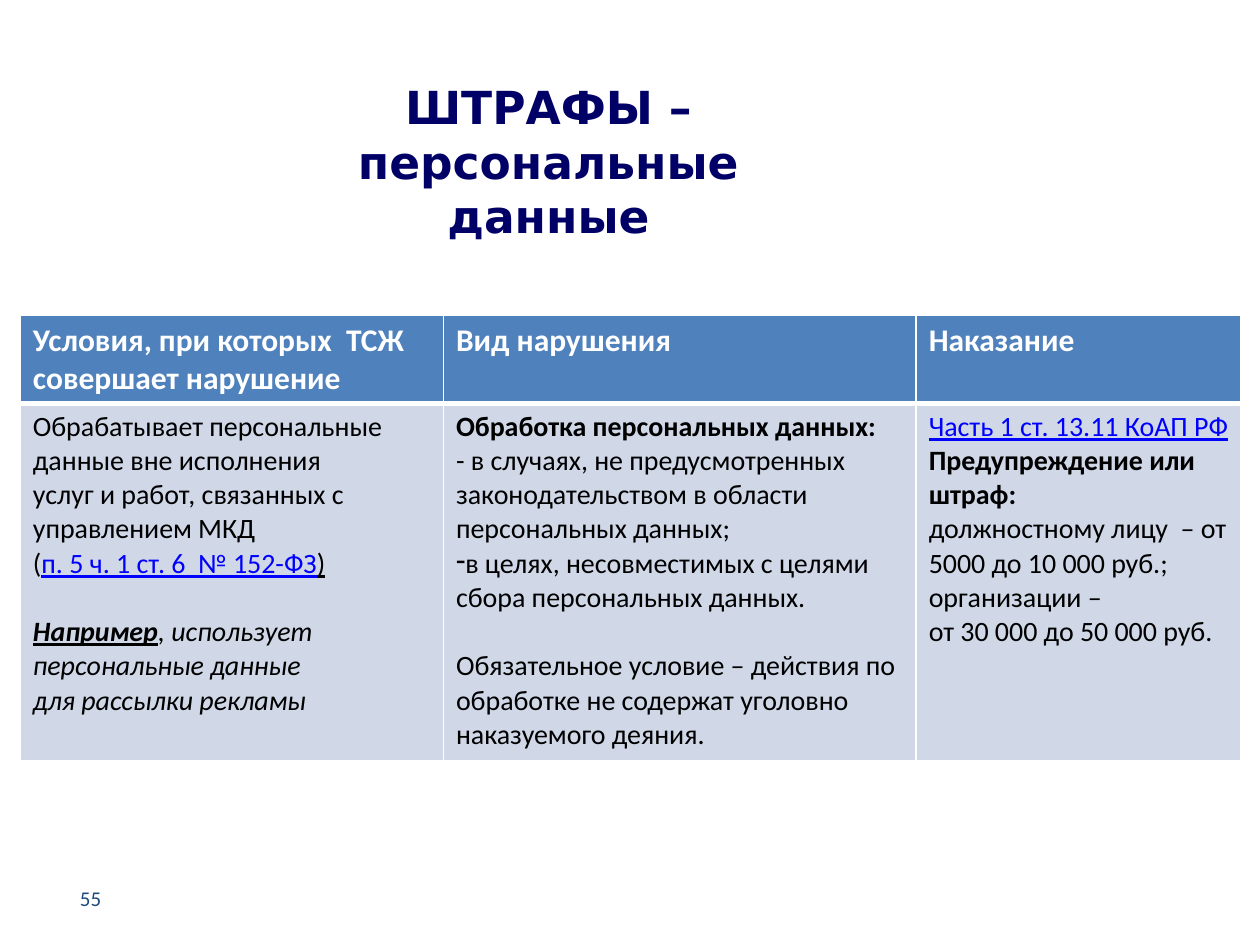
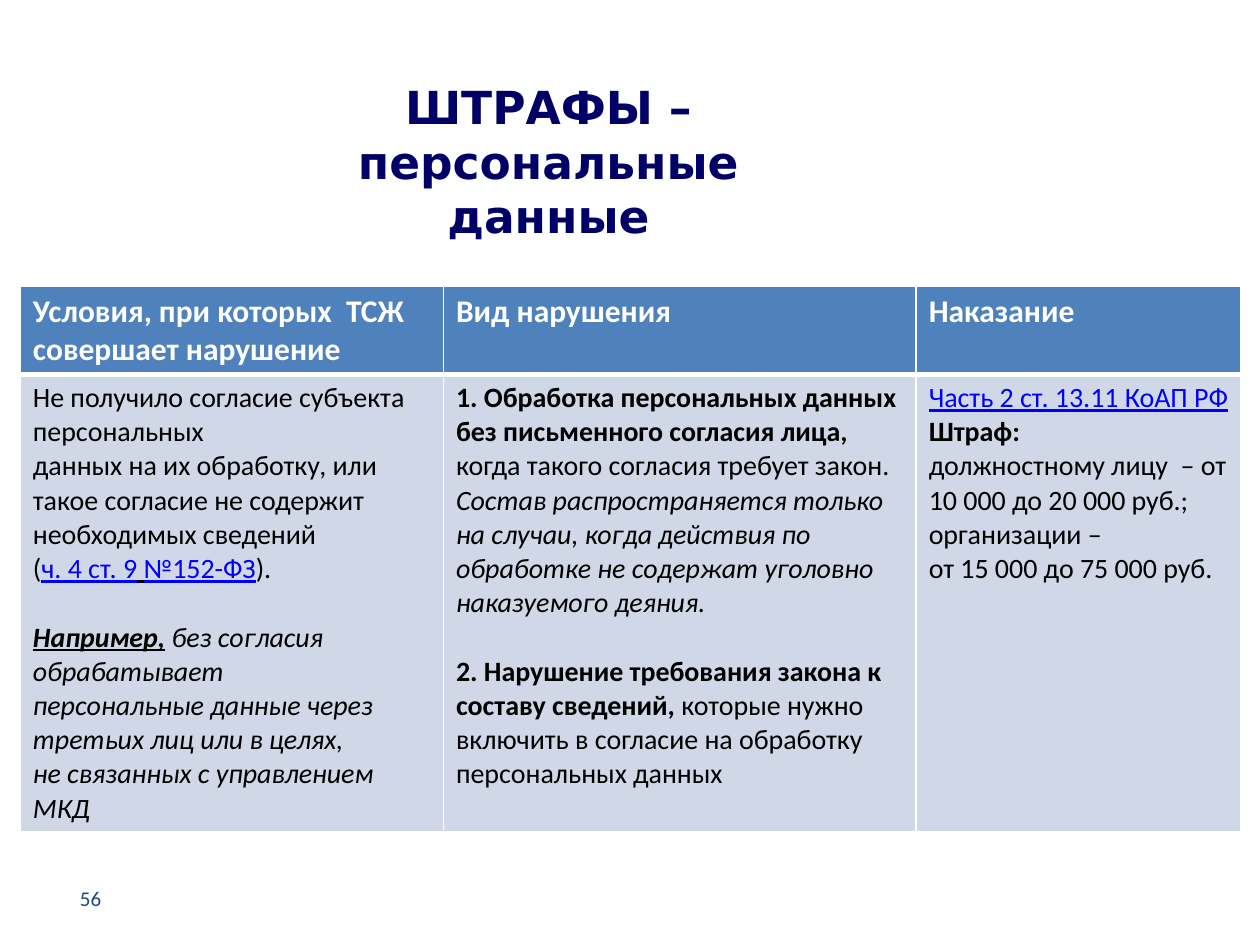
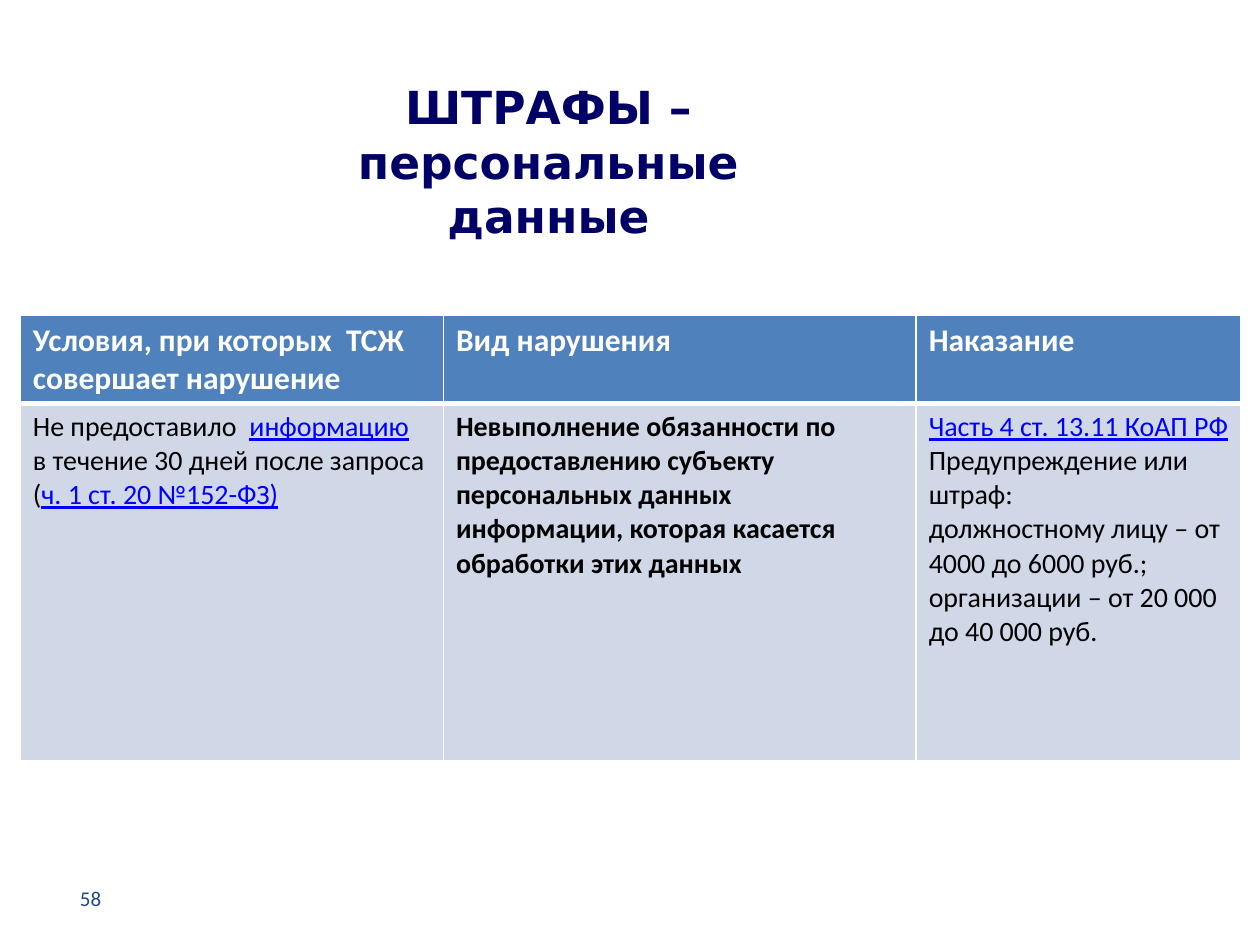
from dataclasses import dataclass

from lxml.etree import SubElement
from pptx import Presentation
from pptx.dml.color import RGBColor
from pptx.enum.text import MSO_ANCHOR, PP_ALIGN
from pptx.oxml.ns import qn
from pptx.util import Cm, Pt

COLORS = {
    "title": "000066",
    "header": "4F81BD",
    "body": "D0D8E8",
    "grid": "FFFFFF",
    "header_text": "FFFFFF",
    "text": "000000",
    "link": "0000FF",
    "page": "1F497D",
}
TITLE_FONT, BODY_FONT = "DejaVu Sans", "Calibri"
BODY_SIZE = 16
BLANK_LINE = Pt(19.5)

# Boxes: left, top, width, height in cm
TITLE_BOX = (5.94, 1.19, 10.24, 4.11)
PAGE_BOX = (0.89, 17.6, 1.4, 1.02)
TABLE_LEFT = 0.41
COLUMN_WIDTHS = (8.53, 9.53, 6.55)
HEADER_HEIGHT = 1.78

TITLE = "ШТРАФЫ –\vперсональные\vданные"
HEADINGS = ("Условия, при которых  ТСЖ совершает нарушение", "Вид нарушения", "Наказание")


@dataclass
class Para:
    """Runs are (text, style); style letters: b bold, i italic, u underline, l link."""
    runs: list
    gap: bool = False
    dash: bool = False


def plain(text, style=""):
    return Para([(text, style)])


# Content of the slides
FINES = [
    {
        "page": "55", "top": 6.35, "body_height": 7.21,
        "cells": [
            [
                Para([("Обрабатывает персональные данные вне исполнения\n"
                       "услуг и работ, связанных с управлением МКД\n(", ""),
                      ("п. 5 ч. 1 ст. 6  № 152-ФЗ", "lu"), (")", "u")]),
                Para([("Например", "biu"),
                      (", использует персональные данные\nдля рассылки рекламы", "i")], gap=True),
            ],
            [
                plain("Обработка персональных данных:", "b"),
                plain("- в случаях, не предусмотренных законодательством в области "
                      "персональных данных;"),
                Para([("в целях, несовместимых с целями сбора персональных данных.", "")],
                     dash=True),
                Para([("Обязательное условие – действия по обработке не содержат "
                       "уголовно наказуемого деяния.", "")], gap=True),
            ],
            [
                plain("Часть 1 ст. 13.11 КоАП РФ", "lu"),
                plain("Предупреждение или штраф:", "b"),
                plain("должностному лицу  – от 5000 до 10 000 руб.;"),
                plain("организации –"),
                plain("от 30 000 до 50 000 руб."),
            ],
        ],
    },
    {
        "page": "56", "top": 5.77, "body_height": 9.22,
        "cells": [
            [
                plain("Не получило согласие субъекта персональных\n"
                      "данных на их обработку, или такое согласие не содержит\n"
                      "необходимых сведений"),
                Para([("(", ""), ("ч. 4 ст. 9", "lu"), (" ", "u"),
                      ("№152-ФЗ", "lu"), (").", "")]),
                Para([("Например,", "biu"),
                      (" без согласия обрабатывает\nперсональные данные через третьих лиц "
                       "или в целях,\nне связанных с управлением МКД", "i")], gap=True),
            ],
            [
                Para([("1. Обработка персональных данных без письменного согласия лица, ", "b"),
                      ("когда такого согласия требует закон. ", ""),
                      ("Состав распространяется только на случаи, когда действия по обработке "
                       "не содержат уголовно наказуемого деяния.", "i")]),
                Para([("2. Нарушение требования закона к составу сведений, ", "b"),
                      ("которые нужно включить в согласие на обработку персональных данных", "")],
                     gap=True),
            ],
            [
                plain("Часть 2 ст. 13.11 КоАП РФ", "lu"),
                plain("Штраф:", "b"),
                plain("должностному лицу  – от 10 000 до 20 000 руб.;"),
                plain("организации –"),
                plain("от 15 000 до 75 000 руб."),
            ],
        ],
    },
    {
        "page": "58", "top": 6.35, "body_height": 7.21,
        "cells": [
            [
                Para([("Не предоставило  ", ""), ("информацию", "lu")]),
                Para([("в течение 30 дней после запроса (", ""),
                      ("ч. 1 ст. 20 №152-ФЗ)", "lu")]),
            ],
            [
                plain("Невыполнение обязанности по предоставлению субъекту персональных данных "
                      "информации, которая касается обработки этих данных", "b"),
            ],
            [
                plain("Часть 4 ст. 13.11 КоАП РФ", "lu"),
                plain("Предупреждение или штраф:"),
                plain("должностному лицу – от 4000 до 6000 руб.;"),
                plain("организации – от 20 000 до 40 000 руб."),
            ],
        ],
    },
]


def color(name):
    return RGBColor.from_string(COLORS[name])


def set_font(font, name, size, color_name, bold=None):
    font.name, font.size, font.bold = name, Pt(size), bold
    font.color.rgb = color(color_name)


def apply_style(font, style):
    if "b" in style:
        font.bold = True
    if "i" in style:
        font.italic = True
    if "u" in style:
        font.underline = True
    if "l" in style:
        font.color.rgb = color("link")


def add_label(slide, box, text, align):
    """Add a one-paragraph text box and return its font."""
    frame = slide.shapes.add_textbox(*map(Cm, box)).text_frame
    frame.word_wrap = True
    frame.vertical_anchor = MSO_ANCHOR.MIDDLE
    paragraph = frame.paragraphs[0]
    paragraph.text = text
    paragraph.alignment = align
    return paragraph.font


def write_para(paragraph, para):
    if para.dash:
        properties = paragraph._p.get_or_add_pPr()
        properties.set("marL", "0")
        properties.set("indent", "0")
        SubElement(properties, qn("a:buChar")).set("char", "-")
    if para.gap:
        paragraph.space_before = BLANK_LINE

    # Shared style goes on the paragraph, the rest on its runs
    shared = set.intersection(*(set(style) for _, style in para.runs))
    set_font(paragraph.font, BODY_FONT, BODY_SIZE, "text")
    apply_style(paragraph.font, shared)
    for text, style in para.runs:
        for index, line in enumerate(text.split("\n")):
            if index:
                paragraph.add_line_break()
            run = paragraph.add_run()
            run.text = line
            apply_style(run.font, set(style) - shared)


def paint_cell(cell, fill_name, top, bottom):
    """Draw the cell borders (widths in points), then the fill."""
    properties = cell._tc.get_or_add_tcPr()
    for side, width in (("L", 1), ("R", 1), ("T", top), ("B", bottom)):
        border = SubElement(properties, qn(f"a:ln{side}"), w=str(Pt(width)))
        fill = SubElement(border, qn("a:solidFill"))
        SubElement(fill, qn("a:srgbClr"), val=COLORS["grid"])
    cell.fill.solid()
    cell.fill.fore_color.rgb = color(fill_name)


def add_fines_table(slide, left, top, body_height, cells):
    heights = (HEADER_HEIGHT, body_height)
    box = (left, top, sum(COLUMN_WIDTHS), sum(heights))
    table = slide.shapes.add_table(2, len(HEADINGS), *map(Cm, box)).table
    table.first_row = table.horz_banding = False
    for row, height in zip(table.rows, heights):
        row.height = Cm(height)

    for index, (width, heading, paras) in enumerate(zip(COLUMN_WIDTHS, HEADINGS, cells)):
        table.columns[index].width = Cm(width)
        # Heading
        header = table.cell(0, index)
        paint_cell(header, "header", 1, 3)
        paragraph = header.text_frame.paragraphs[0]
        paragraph.text = heading
        set_font(paragraph.font, BODY_FONT, 18, "header_text", True)
        # Body
        body = table.cell(1, index)
        paint_cell(body, "body", 3, 1)
        frame = body.text_frame
        for number, para in enumerate(paras):
            write_para(frame.add_paragraph() if number else frame.paragraphs[0], para)


def add_fines_slide(deck, page, top, body_height, cells):
    slide = deck.slides.add_slide(deck.slide_layouts[6])
    title_font = add_label(slide, TITLE_BOX, TITLE, PP_ALIGN.CENTER)
    set_font(title_font, TITLE_FONT, 26, "title", True)
    add_fines_table(slide, TABLE_LEFT, top, body_height, cells)
    page_font = add_label(slide, PAGE_BOX, page, PP_ALIGN.RIGHT)
    set_font(page_font, BODY_FONT, 12, "page")


def main():
    deck = Presentation()
    deck.slide_width, deck.slide_height = Cm(25.4), Cm(19.05)
    for fines in FINES:
        add_fines_slide(deck, **fines)
    deck.save("out.pptx")


if __name__ == "__main__":
    main()
